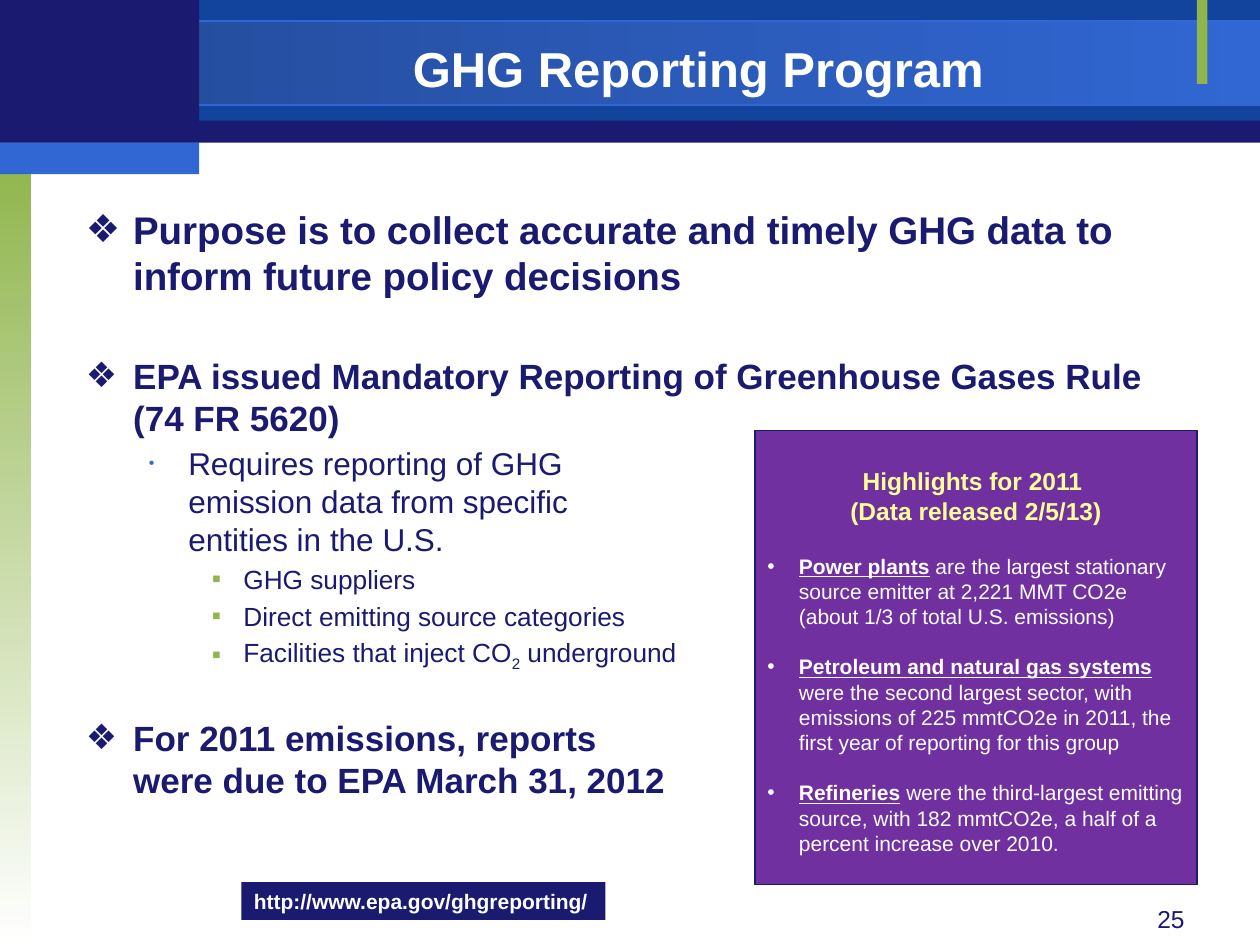
from lxml import etree
from pptx import Presentation
from pptx.dml.color import RGBColor
from pptx.enum.shapes import MSO_SHAPE as Preset
from pptx.enum.text import MSO_ANCHOR as Anchor, PP_ALIGN as Align
from pptx.oxml.ns import qn
from pptx.util import Pt

NAVY = RGBColor(0x1A, 0x1A, 0x70)
BLUE = RGBColor(0x12, 0x44, 0x9E)
STEEL = RGBColor(0x23, 0x4A, 0x97)
BRIGHT = RGBColor(0x31, 0x67, 0xD3)
GREEN = RGBColor(0x90, 0xB5, 0x4D)
PURPLE = RGBColor(0x70, 0x30, 0xA0)
YELLOW = RGBColor(0xFF, 0xFF, 0x99)
WHITE = RGBColor(0xFF, 0xFF, 0xFF)

LEVELS = [
    dict(mark="❖", margin=27, indent=-27, color=None, scale=None),
    dict(mark="•", margin=58.5, indent=-22.5, color=BRIGHT, scale=50),
    dict(mark="▪", margin=90, indent=-18, color=GREEN, scale=None),
]
BODY = [
    (0, 22, 0, ["Purpose is to collect accurate and timely GHG data to "
                "inform future policy decisions"]),
    (0, 20, 32, ["EPA issued Mandatory Reporting of Greenhouse Gases Rule \v(74 FR 5620)"]),
    (1, 18, 3.6, ["Requires reporting of GHG \vemission data from specific \ventities in the U.S."]),
    (2, 15, 3, ["GHG suppliers"]),
    (2, 15, 3, ["Direct emitting source categories"]),
    (2, 15, 3, ["Facilities that inject CO", "2", " underground"]),
    (0, 20, 25, ["For 2011 emissions, reports \vwere due to EPA March 31, 2012"]),
]
HIGHLIGHTS = [
    ("Power plants", " are the largest stationary source emitter at 2,221 MMT CO2e "
                     "(about 1/3 of total U.S. emissions)"),
    ("Petroleum and natural gas systems ",
     "were the second largest sector, with emissions of 225 mmtCO2e in 2011, "
     "the first year of reporting for this group"),
    ("Refineries", " were the third-largest emitting source, with 182 mmtCO2e, "
                   "a half of a percent increase over 2010."),
]


def add_block(slide, box, fill, end_fill=None, angle=0, line=None):
    shape = slide.shapes.add_shape(Preset.RECTANGLE, *map(Pt, box))
    shape.shadow.inherit = False
    if end_fill is None:
        shape.fill.solid()
        shape.fill.fore_color.rgb = fill
    else:
        shape.fill.gradient()
        shape.fill.gradient_angle = angle
        for stop, color, position in zip(shape.fill.gradient_stops, (fill, end_fill), (0, 1)):
            stop.color.rgb = color
            stop.position = position
    if line is None:
        shape.line.fill.background()
    else:
        shape.line.color.rgb = line
        shape.line.width = Pt(0.75)
    return shape


def add_frame(slide, box):
    frame = slide.shapes.add_textbox(*map(Pt, box)).text_frame
    frame.word_wrap = True
    return frame


def style(font, size, color, bold=False):
    font.name = "Arial"
    font.size = Pt(size)
    font.color.rgb = color
    font.bold = bold


def add_bullet(paragraph, mark, margin, indent, color=None, scale=None):
    properties = paragraph._p.get_or_add_pPr()
    properties.set("marL", str(Pt(margin)))
    properties.set("indent", str(Pt(indent)))
    if color is not None:
        holder = etree.SubElement(properties, qn("a:buClr"))
        etree.SubElement(holder, qn("a:srgbClr"), val=str(color))
    if scale is not None:
        etree.SubElement(properties, qn("a:buSzPct"), val=str(scale * 1000))
    etree.SubElement(properties, qn("a:buFont"), typeface="Arial")
    etree.SubElement(properties, qn("a:buChar"), char=mark)


def next_paragraph(frame, index):
    return frame.paragraphs[0] if index == 0 else frame.add_paragraph()


def add_line(frame, text, size, color, bold=False, align=Align.LEFT):
    frame.text = text
    paragraph = frame.paragraphs[0]
    paragraph.alignment = align
    style(paragraph.runs[0].font, size, color, bold)


def add_header(slide, left, top, width, height):
    corner = 113.75
    add_block(slide, (left, top, width, height), NAVY)
    add_block(slide, (left + corner, top, width - corner, 69), BLUE)
    add_block(slide, (left, top + 12, width, 48), STEEL, BRIGHT, line=BRIGHT)
    add_block(slide, (left + 684, top, 6, 48), GREEN)
    add_block(slide, (left, top, corner, height), NAVY)
    add_block(slide, (left, top + height, corner, 18), BRIGHT)
    frame = add_frame(slide, (left + 96, top + 18, 606, 42))
    frame.vertical_anchor = Anchor.MIDDLE
    add_line(frame, "GHG Reporting Program", 28, WHITE, True, Align.CENTER)


def add_body(slide, box):
    frame = add_frame(slide, box)
    for index, (level, size, gap, parts) in enumerate(BODY):
        paragraph = next_paragraph(frame, index)
        paragraph.text = parts[0]
        for part in parts[1:]:
            paragraph.add_run().text = part
        paragraph.level = level
        paragraph.space_before = Pt(gap)
        add_bullet(paragraph, **LEVELS[level])
        for run in paragraph.runs:
            style(run.font, size, NAVY, level == 0)
        if len(parts) == 3:
            paragraph.runs[1].font._element.set("baseline", "-25000")


def add_highlights(slide, box):
    shape = add_block(slide, box, PURPLE, line=NAVY)
    frame = shape.text_frame
    frame.word_wrap = True
    frame.vertical_anchor = Anchor.TOP
    frame.margin_top = Pt(20.5)
    for index, text in enumerate(("Highlights for 2011 ", "(Data released 2/5/13)")):
        heading = next_paragraph(frame, index)
        heading.text = text
        heading.alignment = Align.CENTER
        style(heading.runs[0].font, 14, YELLOW, True)
    for index, (name, detail) in enumerate(HIGHLIGHTS):
        paragraph = frame.add_paragraph()
        paragraph.text = name
        paragraph.add_run().text = detail
        paragraph.alignment = Align.LEFT
        paragraph.space_before = Pt(16 if index == 0 else 14.4)
        add_bullet(paragraph, "•", 18, -18)
        lead, rest = paragraph.runs
        style(lead.font, 12, WHITE, True)
        lead.font.underline = True
        style(rest.font, 12, WHITE)


def add_footer(slide, link_box, number_box):
    frame = add_block(slide, link_box, NAVY).text_frame
    frame.word_wrap = False
    add_line(frame, "http://www.epa.gov/ghgreporting/", 12, WHITE, True)
    add_line(add_frame(slide, number_box), "25", 14, NAVY, align=Align.RIGHT)


def main():
    presentation = Presentation()
    presentation.slide_width = Pt(720)
    presentation.slide_height = Pt(540)
    slide = presentation.slides.add_slide(presentation.slide_layouts[6])
    add_block(slide, (0, 90, 18, 450), GREEN, WHITE, angle=270)
    add_header(slide, 0, 0, 720, 81.5)
    add_body(slide, (42, 114, 648, 396))
    add_highlights(slide, (431.5, 246, 252.5, 259.5))
    add_footer(slide, (138, 504, 208, 21.75), (516, 513, 168, 19.5))
    presentation.save("out.pptx")


if __name__ == "__main__":
    main()
